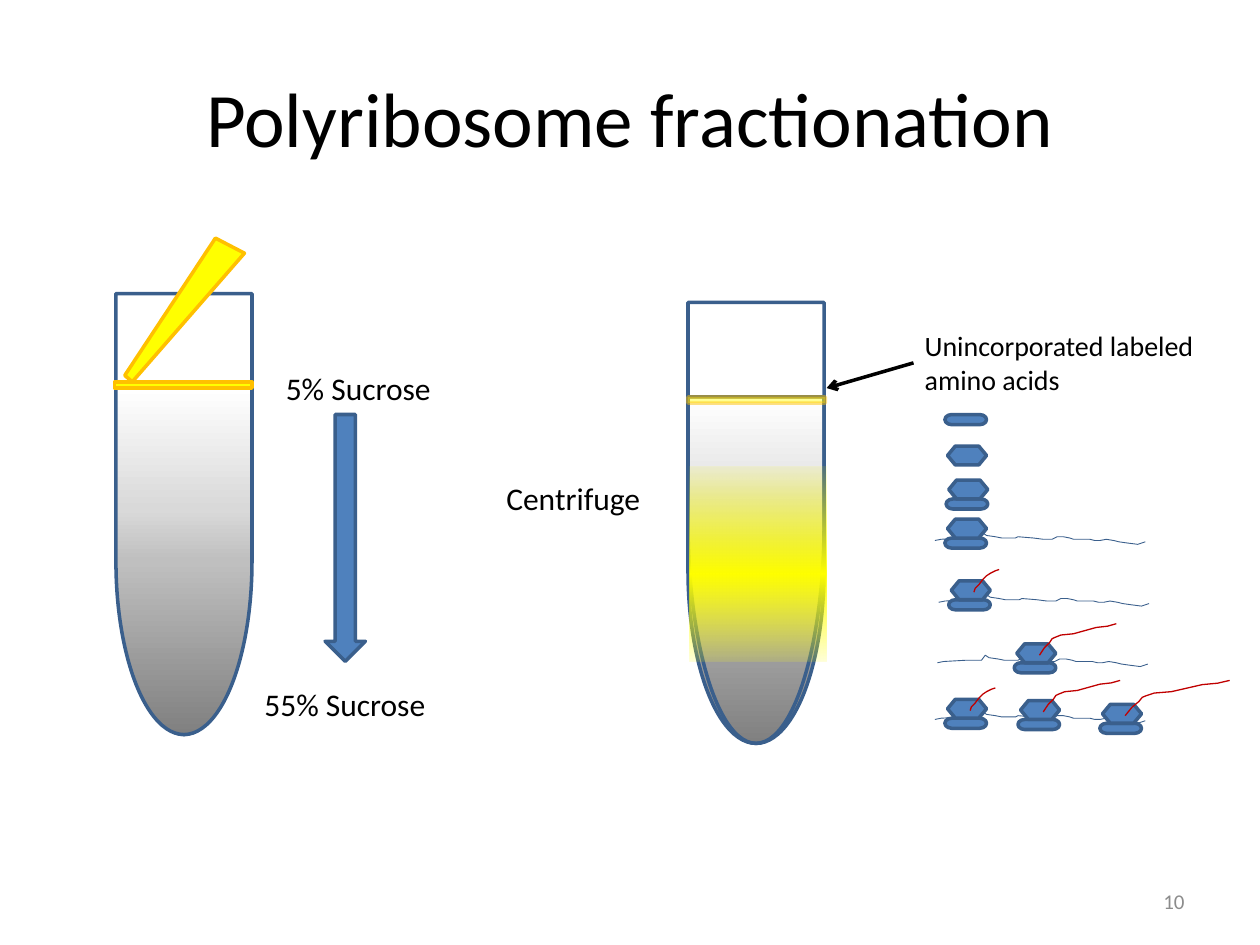
from dataclasses import dataclass

from lxml import etree
from pptx import Presentation
from pptx.dml.color import RGBColor
from pptx.enum.shapes import MSO_CONNECTOR, MSO_SHAPE
from pptx.enum.text import MSO_ANCHOR, MSO_AUTO_SIZE, PP_ALIGN
from pptx.oxml.ns import qn
from pptx.util import Inches, Pt

DELAY = MSO_SHAPE.FLOWCHART_DELAY
TERMINATOR = MSO_SHAPE.FLOWCHART_TERMINATOR
HEXAGON = MSO_SHAPE.FLOWCHART_PREPARATION
RECTANGLE = MSO_SHAPE.RECTANGLE
DOWN_ARROW = MSO_SHAPE.DOWN_ARROW
STRAIGHT = MSO_CONNECTOR.STRAIGHT
MIDDLE = MSO_ANCHOR.MIDDLE
FIT_SHAPE = MSO_AUTO_SIZE.SHAPE_TO_FIT_TEXT
LEFT, CENTER, RIGHT = PP_ALIGN.LEFT, PP_ALIGN.CENTER, PP_ALIGN.RIGHT


@dataclass(frozen=True)
class Theme:
    """Colours, font, type sizes and line widths of the slide."""
    font: str = "Calibri"
    text: str = "000000"
    muted: str = "8C8C8C"
    blue: str = "4F81BD"
    outline: str = "3A5F8C"
    yellow: str = "FFFF00"
    amber: str = "FFC000"
    red: str = "C00000"
    title_size: int = 44
    label_size: int = 18
    note_size: int = 16
    number_size: int = 12
    line: float = 2
    chain_line: float = 0.75
    strand_line: float = 0.5


THEME = Theme()
SUCROSE = ((0, "808080", 100), (50, "BFBFBF", 100),
           (65, "D9D9D9", 100), (100, "FFFFFF", 100))
LABELLED = ((0, THEME.yellow, 10), (55, THEME.yellow, 100), (100, THEME.yellow, 15))
TUBE_WIDTH, TUBE_HEIGHT, SUCROSE_HEIGHT = 1.08, 3.5, 2.75
SMALL_SUBUNIT, LARGE_SUBUNIT = (0.33, 0.08), (0.31, 0.15)

PIPETTE_TIP = ((1.71, 1.89), (0.99, 2.98), (1.05, 3.03), (1.94, 2.01))
STRAND = ((0, 0), (0.05, -0.01), (0.23, -0.02), (0.35, -0.02), (0.38, -0.06),
          (0.41, -0.04), (0.48, -0.03), (0.53, -0.02), (0.64, -0.02), (0.66, -0.03),
          (0.78, -0.02), (0.86, -0.01), (0.93, -0.01), (0.97, -0.03), (1.02, -0.03),
          (1.07, -0.02), (1.1, -0.01), (1.23, -0.01), (1.27, 0), (1.31, 0),
          (1.36, -0.01), (1.42, 0), (1.46, 0.01), (1.53, 0.02), (1.61, 0.03),
          (1.67, 0.01))
SHORT_CHAIN = ((0, 0), (0.01, -0.03), (0.04, -0.06), (0.07, -0.1), (0.09, -0.12),
               (0.1, -0.13), (0.13, -0.15), (0.17, -0.17), (0.2, -0.18))
MEDIUM_CHAIN = ((0, 0), (0.02, -0.03), (0.04, -0.06), (0.08, -0.1), (0.1, -0.13),
                (0.12, -0.14), (0.17, -0.16), (0.27, -0.17), (0.45, -0.22),
                (0.54, -0.23), (0.61, -0.25))
LONG_CHAIN = tuple((x * 1.36, y * 1.12) for x, y in MEDIUM_CHAIN)

STRAND_STARTS = ((7.42, 4.29), (7.45, 4.78), (7.44, 5.26), (7.42, 5.71))
RIBOSOMES = ((7.51, 3.81, None), (7.5, 4.12, None), (7.53, 4.61, SHORT_CHAIN),
             (8.05, 5.11, MEDIUM_CHAIN), (7.5, 5.55, SHORT_CHAIN),
             (8.08, 5.56, MEDIUM_CHAIN), (8.73, 5.59, LONG_CHAIN))


def color(value):
    """Turn a hex string into a colour."""
    return RGBColor.from_string(value)


def paint(shape, fill=None, line=None, width=THEME.line):
    """Set solid fill and line, or leave either out."""
    shape.shadow.inherit = False
    if fill:
        shape.fill.solid()
        shape.fill.fore_color.rgb = color(fill)
    else:
        shape.fill.background()
    if line:
        shape.line.color.rgb = color(line)
        shape.line.width = Pt(width)
    else:
        shape.line.fill.background()


def add_block(page, kind, left, top, width, height, fill=None, line=None):
    """Add a painted preset shape."""
    shape = page.shapes.add_shape(
        kind, Inches(left), Inches(top), Inches(width), Inches(height))
    paint(shape, fill, line)
    return shape


def fade(fill_element, percent):
    """Give the colour in a solid fill an opacity."""
    etree.SubElement(fill_element[0], qn("a:alpha"), val=str(percent * 1000))


def set_gradient(shape, stops, angle):
    """Replace the fill by a linear gradient of (position, colour, opacity)."""
    shape.fill.gradient()
    gradient = shape.element.spPr.find(qn("a:gradFill"))
    stop_list = gradient.find(qn("a:gsLst"))
    for stop in list(stop_list):
        stop_list.remove(stop)
    for position, value, opacity in stops:
        stop = etree.SubElement(stop_list, qn("a:gs"), pos=str(position * 1000))
        tone = etree.SubElement(stop, qn("a:srgbClr"), val=value)
        if opacity < 100:
            etree.SubElement(tone, qn("a:alpha"), val=str(opacity * 1000))
    gradient.find(qn("a:lin")).set("ang", str(angle * 60000))


def add_outline(page, points, start=(0, 0), closed=False, **style):
    """Draw a freeform through points measured from a start."""
    places = [(Inches(start[0] + x), Inches(start[1] + y)) for x, y in points]
    builder = page.shapes.build_freeform(*places[0])
    builder.add_line_segments(places[1:], close=closed)
    paint(builder.convert_to_shape(), **style)


def add_tube_part(page, center, bottom, height):
    """Add an upright round-bottomed outline standing on a bottom line."""
    return_part = add_block(page, DELAY, center - height / 2,
                            bottom - height / 2 - TUBE_WIDTH / 2,
                            height, TUBE_WIDTH, line=THEME.outline)
    return_part.rotation = 90
    return return_part


def add_sucrose(page, center, bottom):
    """Add the graded sucrose column of a tube."""
    column = add_tube_part(page, center, bottom, SUCROSE_HEIGHT)
    set_gradient(column, SUCROSE, 180)


def add_layer(page, left, top):
    """Add the thin sample layer on top of the sucrose."""
    return add_block(page, RECTANGLE, left, top, 1.09, 0.05, THEME.yellow, THEME.amber)


def add_ribosome(page, left, top, chain):
    """Add both subunits and the growing chain, if there is one."""
    add_block(page, TERMINATOR, left, top + 0.15, *SMALL_SUBUNIT, THEME.blue, THEME.outline)
    add_block(page, HEXAGON, left + 0.02, top, *LARGE_SUBUNIT, THEME.blue, THEME.outline)
    if chain:
        add_outline(page, chain, (left + 0.2, top + 0.09),
                    line=THEME.red, width=THEME.chain_line)


def format_text(frame, size, tone=THEME.text, align=LEFT):
    """Format every run of a text frame."""
    for para in frame.paragraphs:
        para.alignment = align
        for span in para.runs:
            span.font.name = THEME.font
            span.font.size = Pt(size)
            span.font.color.rgb = color(tone)


def add_label(page, text, left, top, width, height, size=THEME.label_size):
    """Add an unwrapped label that fits its text."""
    box = page.shapes.add_textbox(Inches(left), Inches(top), Inches(width), Inches(height))
    frame = box.text_frame
    frame.text = text
    frame.word_wrap = False
    frame.auto_size = FIT_SHAPE
    format_text(frame, size)


def add_title(page, text):
    """Fill and place the title placeholder."""
    title = page.shapes.title
    title.left, title.top, title.width, title.height = map(Inches, (0.5, 0.3, 9, 1.25))
    title.text_frame.text = text
    title.text_frame.vertical_anchor = MIDDLE
    format_text(title.text_frame, THEME.title_size, align=CENTER)


def add_page_number(page, text):
    """Add the page number at the lower right."""
    box = page.shapes.add_textbox(Inches(7.17), Inches(6.95), Inches(2.33), Inches(0.4))
    box.text_frame.text = text
    box.text_frame.word_wrap = True
    box.text_frame.vertical_anchor = MIDDLE
    format_text(box.text_frame, THEME.number_size, THEME.muted, RIGHT)


def add_pointer(page, start, end):
    """Add a straight line with an arrowhead at its end."""
    pointer = page.shapes.add_connector(STRAIGHT, *map(Inches, start + end))
    pointer.line.color.rgb = color(THEME.text)
    pointer.line.width = Pt(THEME.line)
    etree.SubElement(pointer.line._get_or_add_ln(), qn("a:tailEnd"), type="arrow")
    etree.SubElement(pointer.element.spPr, qn("a:effectLst"))


def add_loaded_tube(page):
    """Draw the tube being loaded, with its sucrose scale."""
    add_tube_part(page, 1.46, 5.83, TUBE_HEIGHT)
    add_sucrose(page, 1.46, 5.83)
    add_label(page, "5% Sucrose", 2.17, 2.88, 1.37, 0.4)
    add_label(page, "55% Sucrose", 2, 5.39, 1.49, 0.4)
    add_block(page, DOWN_ARROW, 2.58, 3.29, 0.32, 1.96, THEME.blue, THEME.outline)
    add_outline(page, PIPETTE_TIP, closed=True, fill=THEME.yellow, line=THEME.amber)
    add_layer(page, 0.91, 3.03)


def add_spun_tube(page):
    """Draw the tube after spinning, with its labelled band."""
    add_sucrose(page, 6, 5.9)
    add_tube_part(page, 6, 5.9, TUBE_HEIGHT)
    layer = add_layer(page, 5.46, 3.15)
    fade(layer.element.spPr.find(qn("a:solidFill")), 42)
    fade(layer.element.spPr.find(qn("a:ln")).find(qn("a:solidFill")), 47)
    band = add_block(page, RECTANGLE, 5.47, 3.7, 1.09, 1.55)
    set_gradient(band, LABELLED, 90)


def add_fractions(page):
    """Draw subunits, ribosomes and polyribosomes from light to heavy."""
    add_block(page, TERMINATOR, 7.5, 3.29, *SMALL_SUBUNIT, THEME.blue, THEME.outline)
    add_block(page, HEXAGON, 7.52, 3.54, *LARGE_SUBUNIT, THEME.blue, THEME.outline)
    for start in STRAND_STARTS:
        add_outline(page, STRAND, start, line=THEME.outline, width=THEME.strand_line)
    for ribosome in RIBOSOMES:
        add_ribosome(page, *ribosome)


def main():
    """Build and save the slide."""
    deck = Presentation()
    deck.slide_width, deck.slide_height = Inches(10), Inches(7.5)
    page = deck.slides.add_slide(deck.slide_layouts[5])
    add_spun_tube(page)
    add_title(page, "Polyribosome fractionation")
    add_loaded_tube(page)
    add_label(page, "Centrifuge", 3.92, 3.75, 1.28, 0.4)
    add_pointer(page, (7.25, 2.88), (6.56, 3.08))
    add_label(page, "Unincorporated labeled\namino acids", 7.24, 2.56, 2.41, 0.64,
              THEME.note_size)
    add_fractions(page)
    add_page_number(page, "10")
    deck.save("out.pptx")


if __name__ == "__main__":
    main()
